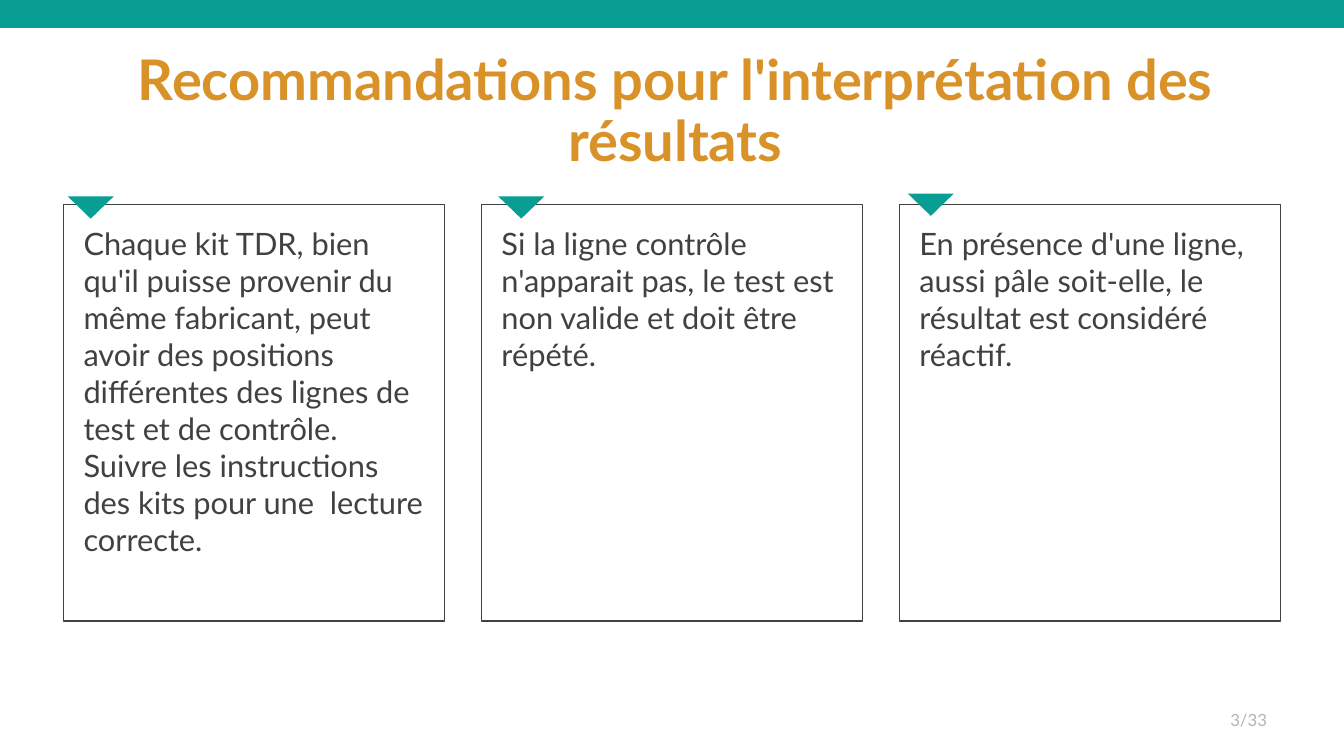
from pptx import Presentation
from pptx.dml.color import RGBColor
from pptx.enum.shapes import MSO_SHAPE
from pptx.enum.text import MSO_ANCHOR, MSO_AUTO_SIZE, PP_ALIGN
from pptx.util import Pt

COLORS = {"teal": "099E93", "gold": "D99228", "ink": "414141", "gray": "B3B3B3"}
CARDS = [
    ("Chaque kit TDR, bien qu'il puisse provenir du même fabricant, peut avoir "
     "des positions différentes des lignes de test et de contrôle. Suivre les "
     "instructions des kits pour une  lecture correcte.", 3, -6),
    ("Si la ligne contrôle n'apparait pas, le test est non valide et doit être "
     "répété.", 12, -6),
    ("En présence d'une ligne, aussi pâle soit-elle, le résultat est considéré "
     "réactif.", 6, -8),
]


def color(name):
    """Return the named colour."""
    return RGBColor.from_string(COLORS[name])


def assign(item, values):
    """Set each attribute of an item from a dict."""
    for key, value in values.items():
        setattr(item, key, value)


def write(shape, text, size, tint, align, anchor, inset=(7.2, 3.6), lead=1.0, bold=False):
    """Put one formatted paragraph in a shape."""
    side, edge = map(Pt, inset)
    frame = shape.text_frame
    assign(frame, {"word_wrap": True, "auto_size": MSO_AUTO_SIZE.NONE,
                   "vertical_anchor": anchor, "margin_left": side,
                   "margin_right": side, "margin_top": edge, "margin_bottom": edge})
    line = frame.paragraphs[0]
    assign(line, {"text": text, "alignment": align, "line_spacing": lead,
                  "space_before": Pt(0)})
    font = line.runs[0].font
    assign(font, {"name": "Lato", "size": Pt(size), "bold": bold})
    font.color.rgb = color(tint)


def solid(slide, kind, box, tint):
    """Add a filled shape without outline."""
    shape = slide.shapes.add_shape(kind, *map(Pt, box))
    shape.shadow.inherit = False
    shape.fill.solid()
    shape.fill.fore_color.rgb = color(tint)
    shape.line.fill.background()
    return shape


def header(slide, box):
    """Place the top band and the title below it."""
    left, top, width, height = box
    solid(slide, MSO_SHAPE.RECTANGLE, (left - 6, top - 6.5, width + 12, 26.5), "teal")
    title = slide.shapes.title
    spot = (left + 52.5, top + 28.8, width - 100.3, height - 28.8)
    assign(title, dict(zip(("left", "top", "width", "height"), map(Pt, spot))))
    write(title, "Recommandations pour l'interprétation des résultats", 40, "gold",
          PP_ALIGN.CENTER, MSO_ANCHOR.MIDDLE, lead=0.9, bold=True)


def card(slide, box, text):
    """Place an outlined card with its text."""
    frame = slide.shapes.add_shape(MSO_SHAPE.RECTANGLE, *map(Pt, box))
    frame.shadow.inherit = False
    frame.fill.background()
    frame.line.color.rgb = color("ink")
    frame.line.width = Pt(0.75)
    write(frame, text, 22, "ink", PP_ALIGN.LEFT, MSO_ANCHOR.TOP, inset=(14.4, 14.4))


def cards(slide, box, gap):
    """Place the row of cards and their markers."""
    left, top, width, height = box
    wide = (width - gap * (len(CARDS) - 1)) / len(CARDS)
    for index, (text, right, down) in enumerate(CARDS):
        start = left + index * (wide + gap)
        card(slide, (start, top, wide, height), text)
        mark = solid(slide, MSO_SHAPE.ISOSCELES_TRIANGLE,
                     (start + right, top + down, 33, 16), "teal")
        mark.rotation = 180


def footer(slide, box):
    """Place the page number."""
    label = slide.shapes.add_textbox(*map(Pt, box))
    write(label, "3/33", 12, "gray", PP_ALIGN.RIGHT, MSO_ANCHOR.MIDDLE, lead=0.9)


def main():
    """Build and save the slide."""
    deck = Presentation()
    assign(deck, {"slide_width": Pt(960), "slide_height": Pt(540)})
    slide = deck.slides.add_slide(deck.slide_layouts[5])
    header(slide, (0, 0, 960, 132.5))
    cards(slide, (45.3, 146.2, 869.3, 297.4), 26.3)
    footer(slide, (696.2, 500.4, 216, 28.8))
    deck.save("out.pptx")


if __name__ == "__main__":
    main()
